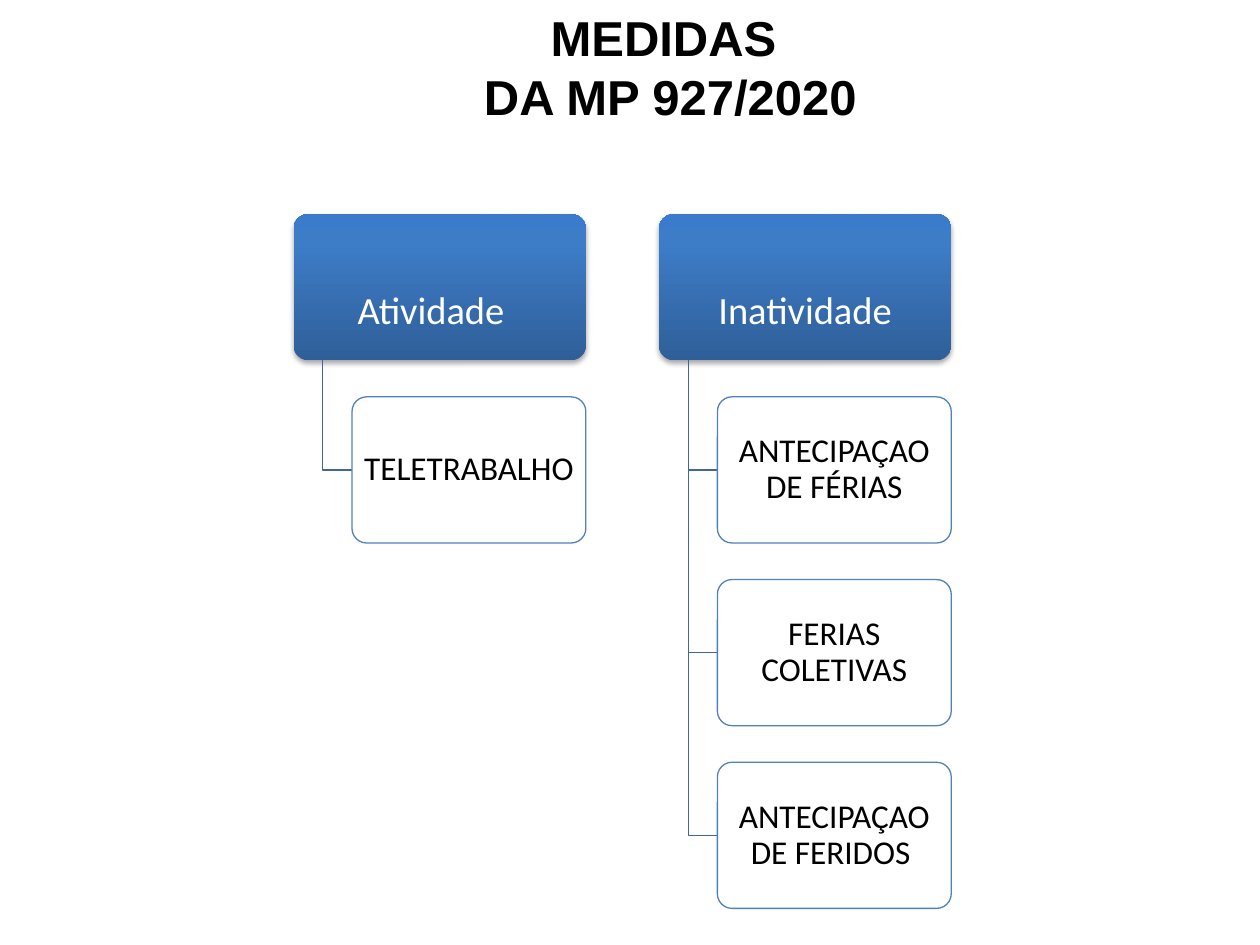
from dataclasses import dataclass

import pptx
import pptx.dml.color
import pptx.enum.shapes
import pptx.enum.text
import pptx.oxml
import pptx.oxml.ns
import pptx.util
from lxml import etree

Inches = pptx.util.Inches
Pt = pptx.util.Pt
Align = pptx.enum.text.PP_ALIGN
Anchor = pptx.enum.text.MSO_ANCHOR
ROUNDED = pptx.enum.shapes.MSO_SHAPE.ROUNDED_RECTANGLE
qn = pptx.oxml.ns.qn


@dataclass(frozen=True)
class Theme:
    title_font: str = "Arial"
    body_font: str = "Calibri"
    title_size: int = 28
    header_size: int = 22
    item_size: int = 19
    black: str = "000000"
    white: str = "FFFFFF"
    outline: str = "4F81BD"
    branch: str = "3F6797"
    gradient: tuple = ((0, "2F5F99"), (80, "3D7CC7"), (100, "3A7CCB"))


THEME = Theme()
UNIT = 0.29
LEFT, TOP = 2.33, 1.7
COLUMN_STEP, ROW_STEP = 10, 5
HEADER_WIDTH, BOX_HEIGHT = 8, 4
STEM, INDENT = 0.8, 1.6

# Heading, extra right inset in inches, items
BRANCHES = (
    ("Atividade", 0.14, ("TELETRABALHO",)),
    ("Inatividade", 0, ("ANTECIPAÇAO DE FÉRIAS", "FERIAS COLETIVAS",
                        "ANTECIPAÇAO DE FERIDOS ")),
)


def grid_x(units):
    return Inches(LEFT + units * UNIT)


def grid_y(units):
    return Inches(TOP + units * UNIT)


def rgb(color):
    return pptx.dml.color.RGBColor.from_string(color)


def add_span(para, text, font, size, color, bold=False):
    span = para.add_run()
    span.text = text
    span.font.name = font
    span.font.size = Pt(size)
    span.font.bold = bold
    span.font.color.rgb = rgb(color)


def add_title(page):
    title = page.shapes.title
    title.left, title.top = Inches(3.43), Inches(0.01)
    title.width, title.height = Inches(3.78), Inches(1.04)
    frame = title.text_frame
    frame.word_wrap = True
    frame.auto_size = pptx.enum.text.MSO_AUTO_SIZE.SHAPE_TO_FIT_TEXT
    frame.vertical_anchor = Anchor.TOP
    for para, text in ((frame.paragraphs[0], "MEDIDAS "),
                       (frame.add_paragraph(), "DA MP 927/2020")):
        para.alignment = Align.CENTER
        add_span(para, text, THEME.title_font, THEME.title_size,
                 THEME.black, bold=True)


def add_box(page, column, row, width, text, size, color):
    box = page.shapes.add_shape(ROUNDED, grid_x(column), grid_y(row),
                                Inches(width * UNIT), Inches(BOX_HEIGHT * UNIT))
    box.adjustments[0] = 0.1
    box.shadow.inherit = False
    frame = box.text_frame
    frame.word_wrap = True
    frame.vertical_anchor = Anchor.MIDDLE
    frame.margin_left = frame.margin_right = Inches(0.04)
    frame.margin_top = frame.margin_bottom = Inches(0.03)
    para = frame.paragraphs[0]
    para.alignment = Align.CENTER
    para.line_spacing = 0.9
    add_span(para, text, THEME.body_font, size, color)
    return box


def fill_gradient(box):
    """Fill from the bottom edge to the top with the theme's stops."""
    box.fill.gradient()
    gradient = box._element.spPr.find(qn("a:gradFill"))
    stops = gradient.find(qn("a:gsLst"))
    for stop in list(stops):
        stops.remove(stop)
    for position, color in THEME.gradient:
        stop = etree.SubElement(stops, qn("a:gs"), pos=str(position * 1000))
        etree.SubElement(stop, qn("a:srgbClr"), val=color)
    gradient.find(qn("a:lin")).set("ang", str(270 * 60000))


def add_shadow(box):
    effects = box._element.spPr.find(qn("a:effectLst"))
    shadow = etree.SubElement(effects, qn("a:outerShdw"), blurRad=str(Pt(3.1)),
                              dist=str(Pt(1.8)), dir=str(90 * 60000),
                              rotWithShape="0")
    color = etree.SubElement(shadow, qn("a:srgbClr"), val=THEME.black)
    etree.SubElement(color, qn("a:alpha"), val="35000")


def add_header(page, column, text, extra_inset):
    box = add_box(page, column, 0, HEADER_WIDTH, text,
                  THEME.header_size, THEME.white)
    fill_gradient(box)
    box.line.fill.background()
    add_shadow(box)
    frame = box.text_frame
    frame.vertical_anchor = Anchor.BOTTOM
    frame.margin_bottom = Inches(0.18)
    frame.margin_right = Inches(0.04 + extra_inset)


def add_item(page, column, row, text):
    box = add_box(page, column + INDENT, row, HEADER_WIDTH - INDENT, text,
                  THEME.item_size, THEME.black)
    box.fill.solid()
    box.fill.fore_color.rgb = rgb(THEME.white)
    color = box._element.spPr.find(qn("a:solidFill"))[0]
    etree.SubElement(color, qn("a:alpha"), val="90000")
    box.line.color.rgb = rgb(THEME.outline)
    box.line.width = Pt(0.75)


def add_elbow(page, column, row):
    """Draw the bent line from a header's lower edge to an item's left side."""
    stem_x, middle_y = grid_x(column + STEM), grid_y(row + BOX_HEIGHT / 2)
    builder = page.shapes.build_freeform(stem_x, grid_y(BOX_HEIGHT))
    builder.add_line_segments(
        [(stem_x, middle_y), (grid_x(column + INDENT), middle_y)], close=False)
    elbow = builder.convert_to_shape()
    elbow.fill.background()
    elbow.line.color.rgb = rgb(THEME.branch)
    elbow.line.width = Pt(0.75)
    elbow.shadow.inherit = False


def main():
    deck = pptx.Presentation()
    deck.slide_width, deck.slide_height = Inches(10), Inches(7.5)
    page = deck.slides.add_slide(deck.slide_layouts.get_by_name("Title Only"))
    add_title(page)
    for index, (heading, extra_inset, items) in enumerate(BRANCHES):
        column = index * COLUMN_STEP
        add_header(page, column, heading, extra_inset)
        for number, item in enumerate(items, start=1):
            add_elbow(page, column, number * ROW_STEP)
            add_item(page, column, number * ROW_STEP, item)
    deck.save("out.pptx")


if __name__ == "__main__":
    main()
